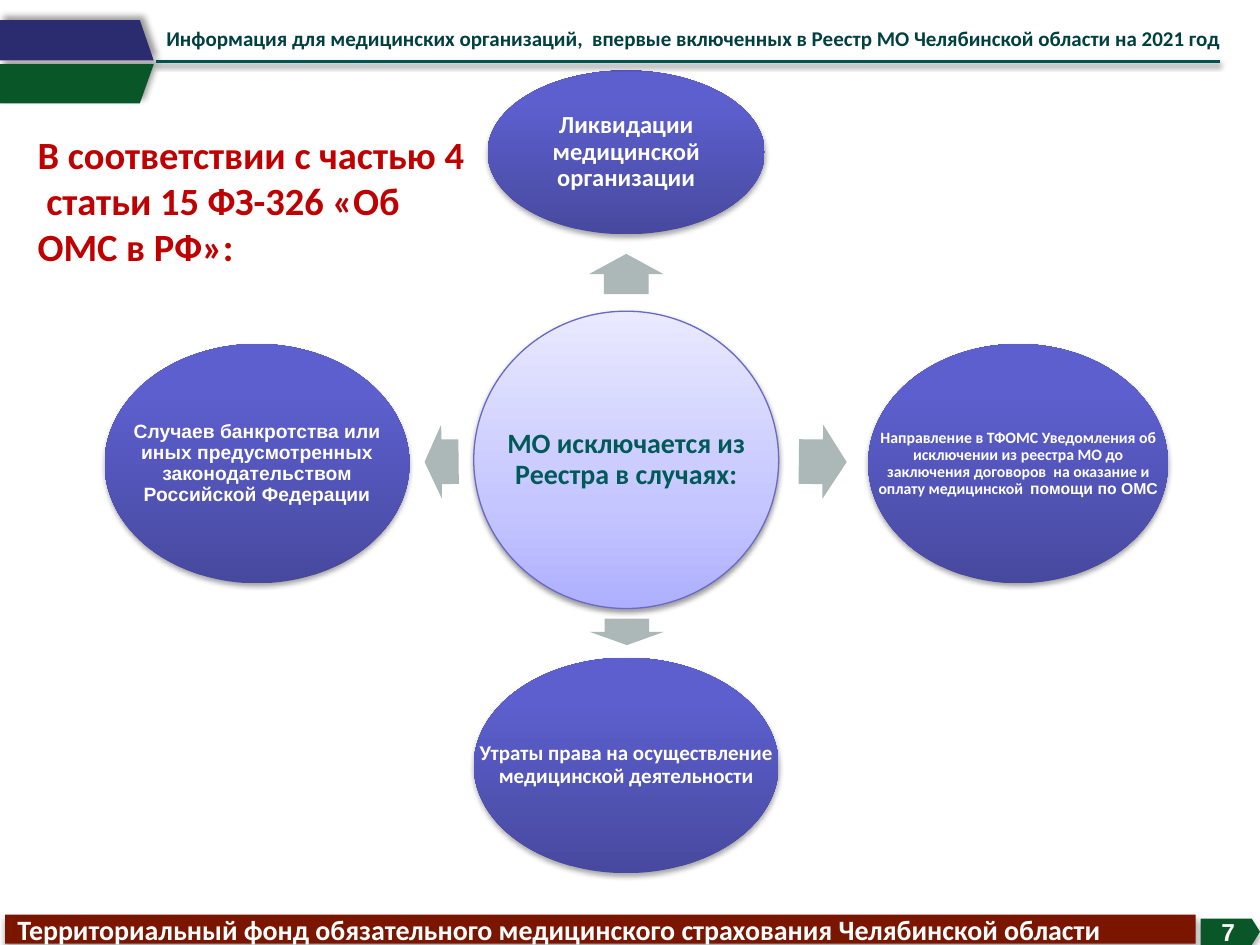
from copy import deepcopy
from dataclasses import dataclass
from typing import Optional

from lxml import etree
from pptx import Presentation
from pptx import util as u
from pptx.dml.color import RGBColor
from pptx.enum import shapes, text
from pptx.oxml import ns

COLUMNS, ROWS = 100, 75
CELL = u.Inches(0.1)


@dataclass(frozen=True)
class Shadow:
    alpha: int
    blur: float
    distance: float
    angle: int = 90


@dataclass(frozen=True)
class Theme:
    header: str = "004040"
    heading: str = "C00000"
    hub_text: str = "005A58"
    light: str = "FFFFFF"
    rule: str = "005353"
    arrow: str = "ABB8B7"
    navy: str = "2B2C6F"
    green: str = "095729"
    footer: str = "7A1600"
    hub_line: str = "686AC5"
    hub_stops: tuple = ((0, "AEAFFF"), (0.35, "C5C6FF"), (1, "E9E9FF"))
    case_stops: tuple = ((0, "47499F"), (0.8, "5D5FCE"), (1, "5B5DD1"))
    hub_shadow: Shadow = Shadow(38, 3.1, 1.6)
    case_shadow: Shadow = Shadow(35, 3.1, 1.8)
    banner_shadow: Shadow = Shadow(40, 4, 3, 315)
    footer_shadow: Shadow = Shadow(32, 3.5, 2.2)
    font: str = "Calibri"
    plain_font: str = "Arial"
    header_size: int = 12
    heading_size: int = 22
    hub_size: int = 16
    footer_size: int = 16
    number_size: int = 14


THEME = Theme()


@dataclass(frozen=True)
class Box:
    column: float
    row: float
    width: float
    height: float

    def place(self) -> tuple:
        return tuple(cells(n) for n in (self.column, self.row, self.width, self.height))


@dataclass(frozen=True)
class Span:
    words: str
    size: int
    font: str = THEME.font
    color: str = THEME.light


@dataclass(frozen=True)
class Oval:
    box: Box
    spans: tuple
    stops: tuple = THEME.case_stops
    shadow: Shadow = THEME.case_shadow
    line: Optional[str] = None


@dataclass(frozen=True)
class Arrow:
    box: Box
    turn: float


OVALS = (
    Oval(Box(37.6, 24.7, 24.2, 23.6),
         (Span("МО исключается из Реестра в случаях:", THEME.hub_size, color=THEME.hub_text),),
         THEME.hub_stops, THEME.hub_shadow, THEME.hub_line),
    Oval(Box(38.7, 5.6, 22, 13), (Span("Ликвидации медицинской организации", 14),)),
    Oval(Box(68.9, 27.3, 23.8, 19),
         (Span("Направление в ТФОМС Уведомления об исключении из реестра МО до заключения "
               "договоров  на оказание и оплату медицинской  ", 9),
          Span("помощи по ОМС", 9, THEME.plain_font))),
    Oval(Box(37.6, 52.2, 24.2, 17.1),
         (Span("Утраты права на осуществление медицинской деятельности", 12),)),
    Oval(Box(8.3, 27.3, 24.2, 19),
         (Span("Случаев банкротства или иных предусмотренных законодательством "
               "Российской Федерации", 11, THEME.plain_font),)),
)
ARROWS = (
    Arrow(Box(48.1, 18.8, 3.2, 5.9), 270),
    Arrow(Box(63.4, 33.7, 3.8, 5.9), 0.6),
    Arrow(Box(48.7, 47.2, 2.1, 5.9), 90),
    Arrow(Box(33.7, 33.7, 2.7, 5.9), 179.4),
)
BANNERS = (
    (((12.2, 5.1), (11.1, 8.2), (0, 8.2), (0, 5.1)), THEME.green),
    (((12.2, 4.8), (11.1, 1.6), (0, 1.6), (0, 4.8)), THEME.navy),
)


def cells(count: float) -> int:
    return round(count * CELL)


def rgb(color: str) -> RGBColor:
    return RGBColor.from_string(color)


def set_shadow(item, shadow: Optional[Shadow]) -> None:
    effects = etree.SubElement(item.element.spPr, ns.qn("a:effectLst"))
    if shadow:
        outer = etree.SubElement(
            effects, ns.qn("a:outerShdw"), blurRad=str(u.Pt(shadow.blur)),
            dist=str(u.Pt(shadow.distance)), dir=str(shadow.angle * 60000), rotWithShape="0")
        tone = etree.SubElement(outer, ns.qn("a:srgbClr"), val="000000")
        etree.SubElement(tone, ns.qn("a:alpha"), val=str(shadow.alpha * 1000))


def paint(shape, color: str, shadow: Optional[Shadow] = None) -> None:
    shape.fill.solid()
    shape.fill.fore_color.rgb = rgb(color)
    shape.line.fill.background()
    set_shadow(shape, shadow)


def paint_gradient(shape, stops: tuple) -> None:
    shape.fill.gradient()
    shape.fill.gradient_angle = 90
    stop_list = shape.element.spPr.find(".//" + ns.qn("a:gsLst"))
    stop_list.append(deepcopy(stop_list[-1]))
    for stop, (position, color) in zip(shape.fill.gradient_stops, stops):
        stop.position = position
        stop.color.rgb = rgb(color)


def write(shape, spans: tuple, align=text.PP_ALIGN.LEFT,
          anchor=text.MSO_ANCHOR.TOP, inset: Optional[float] = None) -> None:
    frame = shape.text_frame
    frame.word_wrap = True
    frame.auto_size = text.MSO_AUTO_SIZE.NONE
    frame.vertical_anchor = anchor
    if inset is not None:
        frame.margin_left = frame.margin_right = u.Inches(inset)
        frame.margin_top = frame.margin_bottom = u.Inches(inset)
    para = frame.paragraphs[0]
    para.alignment = align
    for span in spans:
        run = para.add_run()
        run.text = span.words
        run.font.size = u.Pt(span.size)
        run.font.name = span.font
        run.font.bold = True
        run.font.color.rgb = rgb(span.color)


def draw_oval(page, oval: Oval) -> None:
    shape = page.shapes.add_shape(shapes.MSO_SHAPE.OVAL, *oval.box.place())
    paint_gradient(shape, oval.stops)
    if oval.line:
        shape.line.color.rgb = rgb(oval.line)
        shape.line.width = u.Pt(0.75)
    else:
        shape.line.fill.background()
    set_shadow(shape, oval.shadow)
    label = page.shapes.add_textbox(*oval.box.place())
    write(label, oval.spans, text.PP_ALIGN.CENTER, text.MSO_ANCHOR.MIDDLE, 0.02)
    label.text_frame.paragraphs[0].line_spacing = 0.9


def draw_arrow(page, arrow: Arrow) -> None:
    shape = page.shapes.add_shape(shapes.MSO_SHAPE.RIGHT_ARROW, *arrow.box.place())
    shape.adjustments[0] = 0.6
    shape.rotation = arrow.turn
    paint(shape, THEME.arrow)


def draw_banner(page, points: tuple, color: str) -> None:
    start, *rest = [(cells(column), cells(row)) for column, row in points]
    builder = page.shapes.build_freeform(*start)
    builder.add_line_segments(rest, close=True)
    paint(builder.convert_to_shape(), color, THEME.banner_shadow)


def draw_header(page) -> None:
    rule = page.shapes.add_connector(
        shapes.MSO_CONNECTOR.STRAIGHT, cells(12.4), cells(4.9), cells(96.8), cells(4.9))
    rule.line.color.rgb = rgb(THEME.rule)
    rule.line.width = u.Pt(2)
    set_shadow(rule, THEME.hub_shadow)
    title = page.shapes.title
    title.left, title.top, title.width, title.height = Box(12.2, 1.5, 87.8, 6.1).place()
    write(title, (Span("Информация для медицинских организаций,  впервые включенных "
                       "в Реестр МО Челябинской области на 2021 год",
                       THEME.header_size, color=THEME.header),))
    heading = page.shapes.add_textbox(*Box(2, 9.9, 36.2, 15.8).place())
    write(heading, (Span("В соответствии с частью 4  статьи 15 ФЗ-326 «Об ОМС в РФ»:",
                         THEME.heading_size, color=THEME.heading),))


def draw_footer(page) -> None:
    bar = page.shapes.add_shape(shapes.MSO_SHAPE.RECTANGLE, *Box(0.4, 72.6, 94.5, 2.3).place())
    paint(bar, THEME.footer, THEME.footer_shadow)
    write(bar, (Span("Территориальный фонд обязательного медицинского страхования "
                     "Челябинской области", THEME.footer_size),), anchor=text.MSO_ANCHOR.MIDDLE)
    tag = page.shapes.add_shape(shapes.MSO_SHAPE.PENTAGON, *Box(95.3, 72.9, 4.7, 2.1).place())
    tag.adjustments[0] = 0.31
    paint(tag, THEME.green, THEME.footer_shadow)
    write(tag, (Span("7", THEME.number_size, THEME.plain_font),),
          text.PP_ALIGN.CENTER, text.MSO_ANCHOR.MIDDLE)


def main() -> None:
    deck = Presentation()
    deck.slide_width, deck.slide_height = COLUMNS * CELL, ROWS * CELL
    page = deck.slides.add_slide(deck.slide_layouts[5])
    for oval in OVALS:
        draw_oval(page, oval)
    for arrow in ARROWS:
        draw_arrow(page, arrow)
    for points, color in BANNERS:
        draw_banner(page, points, color)
    draw_header(page)
    draw_footer(page)
    deck.save("out.pptx")


if __name__ == "__main__":
    main()
